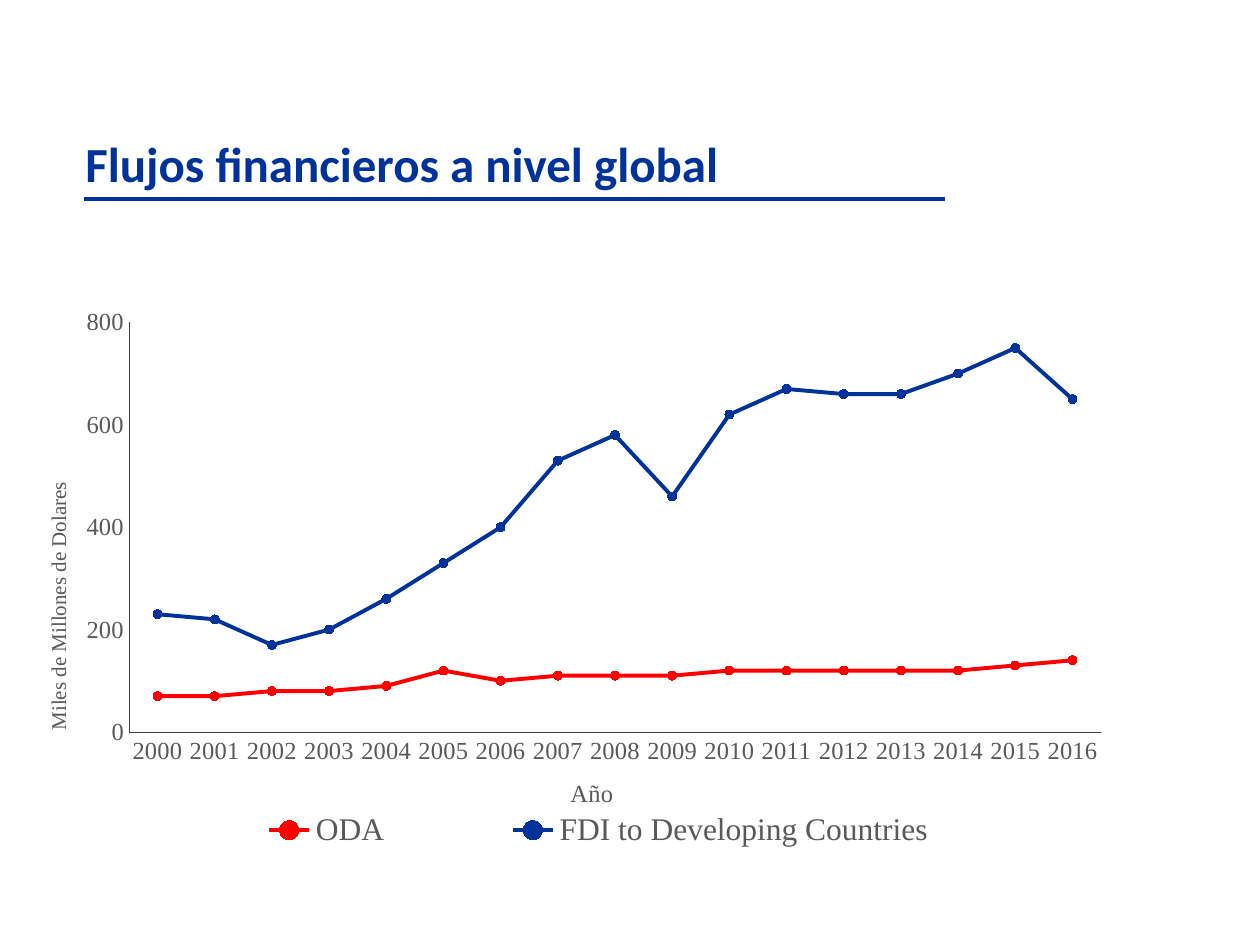
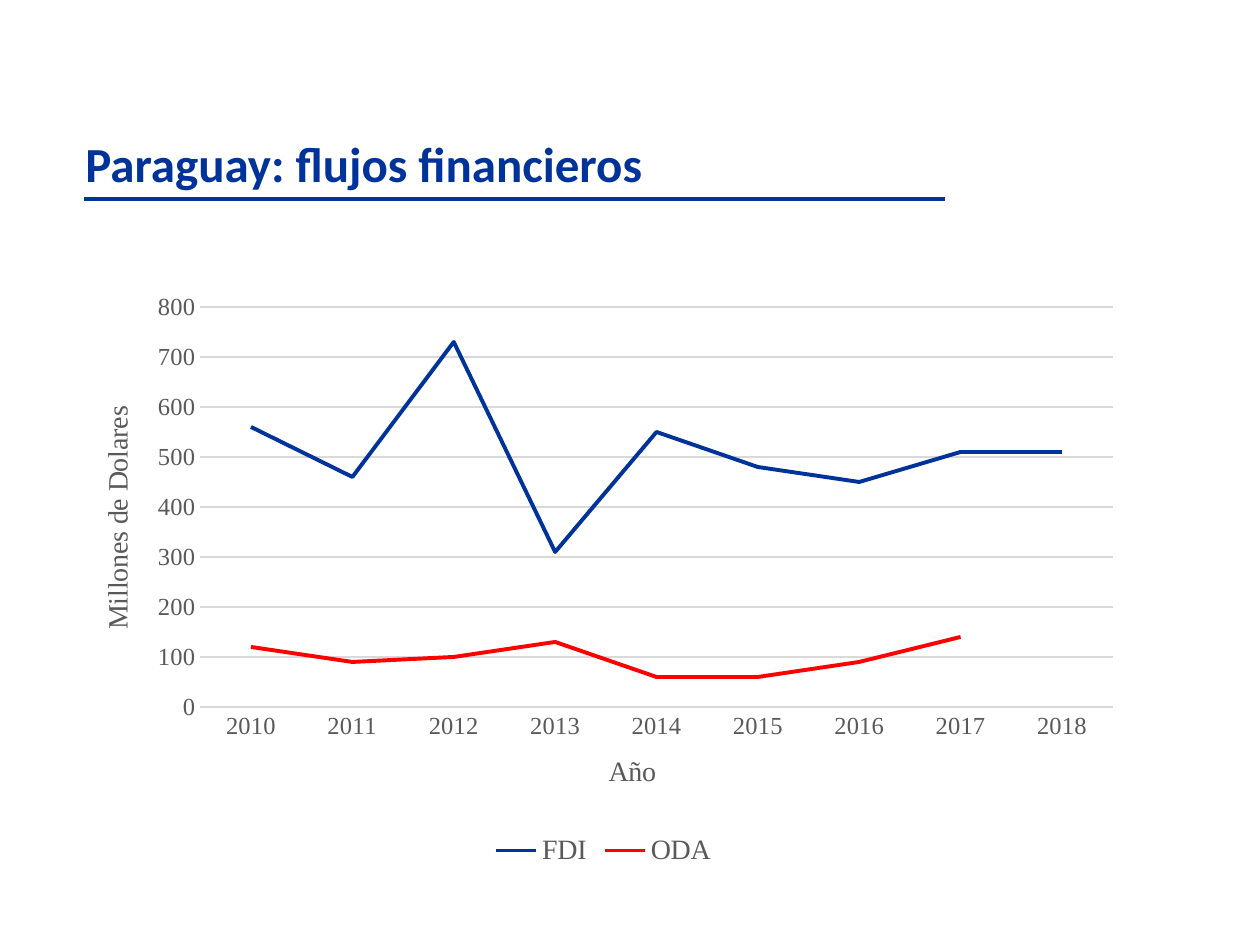
from lxml import etree
from pptx import Presentation
from pptx.chart.data import CategoryChartData
from pptx.dml.color import RGBColor
from pptx.enum.chart import (XL_CHART_TYPE, XL_LEGEND_POSITION,
                             XL_MARKER_STYLE, XL_TICK_MARK)
from pptx.enum.shapes import MSO_CONNECTOR
from pptx.oxml.ns import qn
from pptx.util import Inches, Pt

STRAIGHT = MSO_CONNECTOR.STRAIGHT
LINE, LINE_MARKERS = XL_CHART_TYPE.LINE, XL_CHART_TYPE.LINE_MARKERS
CIRCLE = XL_MARKER_STYLE.CIRCLE
NO_TICK = XL_TICK_MARK.NONE
BOTTOM = XL_LEGEND_POSITION.BOTTOM

BLUE, RED, GRAY = "003399", "FF0000", "595959"
AXIS_DARK, GRID = "404040", "D9D9D9"
TITLE_FONT, CHART_FONT = "Calibri", "Times New Roman"

# Content: layouts are fractions of the chart area (x, y, then width, height)
SLIDES = [
    {
        "title": "Flujos financieros a nivel global",
        "area": (0.33, 2.33, 8.67, 4.58),
        "type": LINE_MARKERS,
        "years": range(2000, 2017),
        "flows": [
            ("ODA", RED, [70, 70, 80, 80, 90, 120, 100, 110, 110, 110, 120,
                          120, 120, 120, 120, 130, 140]),
            ("FDI to Developing Countries", BLUE,
             [230, 220, 170, 200, 260, 330, 400, 530, 580, 460, 620, 670,
              660, 660, 700, 750, 650]),
        ],
        "plot": (0.08, 0.05, 0.89, 0.71),
        "year_title": ("Año", 14, (0.48, 0.83)),
        "amount_title": ("Miles de Millones de Dolares", 12, (0, 0.32)),
        "year_line": (AXIS_DARK, 0.25), "amount_line": (AXIS_DARK, 0.25),
        "step": 200, "grid": None, "format": "General",
        "legend_size": 18, "legend_layout": (0.1, 0.89, 0.82, 0.08),
    },
    {
        "title": "Paraguay: flujos financieros",
        "area": (0.58, 2.25, 8.42, 4.67),
        "type": LINE,
        "years": range(2010, 2019),
        "flows": [
            ("FDI", BLUE, [560, 460, 730, 310, 550, 480, 450, 510, 510]),
            ("ODA", RED, [120, 90, 100, 130, 60, 60, 90, 140, None]),
        ],
        "plot": (0.12, 0.04, 0.86, 0.68),
        "year_title": ("Año", 16, (0.5, 0.79)),
        "amount_title": ("Millones de Dolares", 16, (0.02, 0.2)),
        "year_line": (GRID, 0.75), "amount_line": None,
        "step": 100, "grid": (GRID, 0.75), "format": "#,##0",
        "legend_size": 16, "legend_layout": None,
    },
]


def rgb(color):
    return RGBColor.from_string(color)


def style_font(font, name, size, color, bold=False):
    font.name, font.size, font.bold = name, Pt(size), bold
    font.color.rgb = rgb(color)


def style_line(line, stroke):
    if stroke is None:
        line.fill.background()
    else:
        color, width = stroke
        line.color.rgb = rgb(color)
        line.width = Pt(width)


def place(part, index, fractions, inner=False):
    """Give a chart part a manual layout, as child number index."""
    for old in part.findall(qn("c:layout")):
        part.remove(old)
    layout = etree.Element(qn("c:layout"))
    manual = etree.SubElement(layout, qn("c:manualLayout"))
    settings = [("layoutTarget", "inner")] if inner else []
    settings += [("xMode", "edge"), ("yMode", "edge")]
    settings += zip("xywh", fractions)
    for tag, value in settings:
        etree.SubElement(manual, qn("c:" + tag)).set("val", str(value))
    part.insert(index, layout)


def add_heading(slide, title):
    # Rule under the title
    rule = slide.shapes.add_connector(STRAIGHT, Inches(7.5), Inches(1.58),
                                      Inches(0.67), Inches(1.58))
    style_line(rule.line, (BLUE, 2))
    etree.SubElement(rule._element.spPr, qn("a:effectLst"))
    # Title
    box = slide.shapes.add_textbox(Inches(0.58), Inches(1.01),
                                   Inches(7.17), Inches(0.57))
    box.text_frame.word_wrap = True
    run = box.text_frame.paragraphs[0].add_run()
    run.text = title
    style_font(run.font, TITLE_FONT, 28, BLUE, bold=True)


def style_axis(axis, heading, stroke):
    text, size, position = heading
    axis.major_tick_mark = axis.minor_tick_mark = NO_TICK
    style_font(axis.tick_labels.font, CHART_FONT, 14, GRAY)
    style_line(axis.format.line, stroke)
    run = axis.axis_title.text_frame.paragraphs[0].add_run()
    run.text = text
    style_font(run.font, CHART_FONT, size, GRAY)
    place(axis.axis_title._element, 1, position)


def add_flow_chart(slide, content):
    data = CategoryChartData()
    data.categories = [str(year) for year in content["years"]]
    for name, _, amounts in content["flows"]:
        data.add_series(name, amounts)
    area = [Inches(length) for length in content["area"]]
    chart = slide.shapes.add_chart(content["type"], *area, data).chart
    style_font(chart.font, CHART_FONT, 10, "000000")
    chart.has_title = False
    place(chart._chartSpace.chart.plotArea, 0, content["plot"], inner=True)

    # Axes
    years, amounts = chart.category_axis, chart.value_axis
    style_axis(years, content["year_title"], content["year_line"])
    style_axis(amounts, content["amount_title"], content["amount_line"])
    amounts.minimum_scale, amounts.maximum_scale = 0, 800
    amounts.major_unit = content["step"]
    amounts.tick_labels.number_format = content["format"]
    amounts.tick_labels.number_format_is_linked = False
    amounts.has_major_gridlines = content["grid"] is not None
    if content["grid"]:
        style_line(amounts.major_gridlines.format.line, content["grid"])

    # Flows
    for flow, (_, color, _) in zip(chart.plots[0].series, content["flows"]):
        flow.smooth = False
        style_line(flow.format.line, (color, 2.25))
        if content["type"] == LINE_MARKERS:
            flow.marker.style, flow.marker.size = CIRCLE, 5
            flow.marker.format.fill.solid()
            flow.marker.format.fill.fore_color.rgb = rgb(color)
            style_line(flow.marker.format.line, (color, 0.75))

    # Legend
    chart.has_legend = True
    chart.legend.position = BOTTOM
    chart.legend.include_in_layout = False
    style_font(chart.legend.font, CHART_FONT, content["legend_size"], GRAY)
    if content["legend_layout"]:
        place(chart.legend._element, 1, content["legend_layout"])


def main():
    deck = Presentation()
    deck.slide_width, deck.slide_height = Inches(10), Inches(7.5)
    for content in SLIDES:
        slide = deck.slides.add_slide(deck.slide_layouts[6])
        add_heading(slide, content["title"])
        add_flow_chart(slide, content)
    deck.save("out.pptx")


if __name__ == "__main__":
    main()
